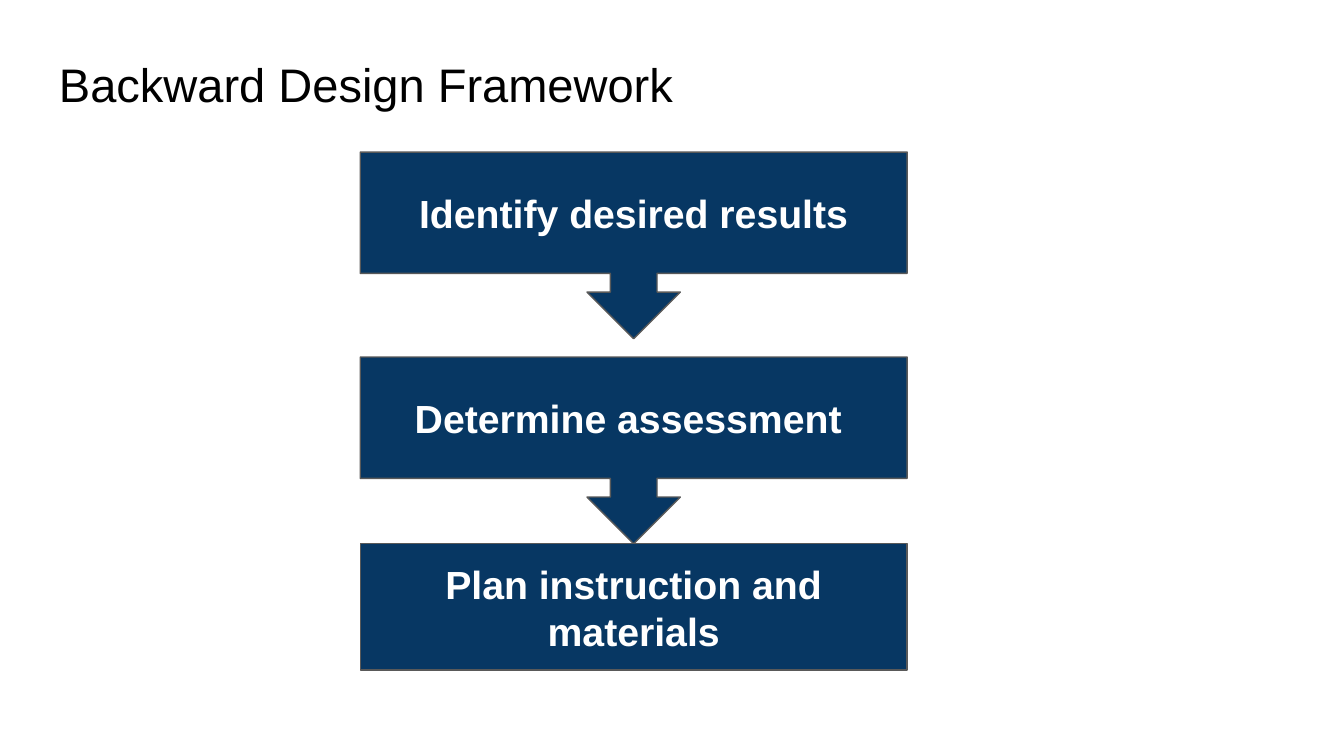
from pptx import Presentation
from pptx import util as u
from pptx.dml.color import RGBColor
from pptx.enum import shapes, text

NAVY = RGBColor(0x07, 0x37, 0x63)
GRAY = RGBColor(0x59, 0x59, 0x59)
WHITE = RGBColor(0xFF, 0xFF, 0xFF)
BLACK = RGBColor(0, 0, 0)

STEP_LEFT, STEP_WIDTH = 193, 293
CALLOUT = shapes.MSO_SHAPE.DOWN_ARROW_CALLOUT
RECTANGLE = shapes.MSO_SHAPE.RECTANGLE
STEPS = [
    ("Identify desired results", CALLOUT, 81.5, 100),
    ("Determine assessment ", CALLOUT, 191.3, 100),
    ("Plan instruction and materials", RECTANGLE, 291.3, 67.7),
]


class FrameworkSlide:
    """Draws the titled step flow on one slide in a single style."""

    font_name = "Arial"
    inset = 7.2

    def __init__(self, slide):
        self.slide = slide

    def set_text(self, shape, wording, size, color, bold, alignment, anchor):
        frame = shape.text_frame
        frame.text = wording
        frame.word_wrap = True
        frame.vertical_anchor = anchor
        frame.margin_left = frame.margin_right = u.Pt(self.inset)
        frame.margin_top = frame.margin_bottom = u.Pt(self.inset)
        paragraph = frame.paragraphs[0]
        paragraph.alignment = alignment
        for run in paragraph.runs:
            run.font.name = self.font_name
            run.font.size = u.Pt(size)
            run.font.bold = bold
            run.font.color.rgb = color

    def title(self, wording, left, top, width, height):
        box = self.slide.shapes.add_textbox(
            u.Pt(left), u.Pt(top), u.Pt(width), u.Pt(height))
        self.set_text(box, wording, 25.2, BLACK, False,
                      text.PP_ALIGN.LEFT, text.MSO_ANCHOR.TOP)

    def step(self, wording, kind, top, height):
        shape = self.slide.shapes.add_shape(
            kind, u.Pt(STEP_LEFT), u.Pt(top), u.Pt(STEP_WIDTH), u.Pt(height))
        if kind == CALLOUT:
            for index, value in enumerate((0.25, 0.25, 0.25, 0.65)):
                shape.adjustments[index] = value
        shape.shadow.inherit = False
        shape.fill.solid()
        shape.fill.fore_color.rgb = NAVY
        shape.line.color.rgb = GRAY
        shape.line.width = u.Pt(0.75)
        self.set_text(shape, wording, 21, WHITE, True,
                      text.PP_ALIGN.CENTER, text.MSO_ANCHOR.MIDDLE)


def main():
    presentation = Presentation()
    presentation.slide_width = u.Pt(720)
    presentation.slide_height = u.Pt(405)
    slide = presentation.slides.add_slide(presentation.slide_layouts[6])
    framework = FrameworkSlide(slide)
    framework.title("Backward Design Framework", 24.5, 22.5, 671, 45)
    for step in STEPS:
        framework.step(*step)
    presentation.save("out.pptx")


if __name__ == "__main__":
    main()
